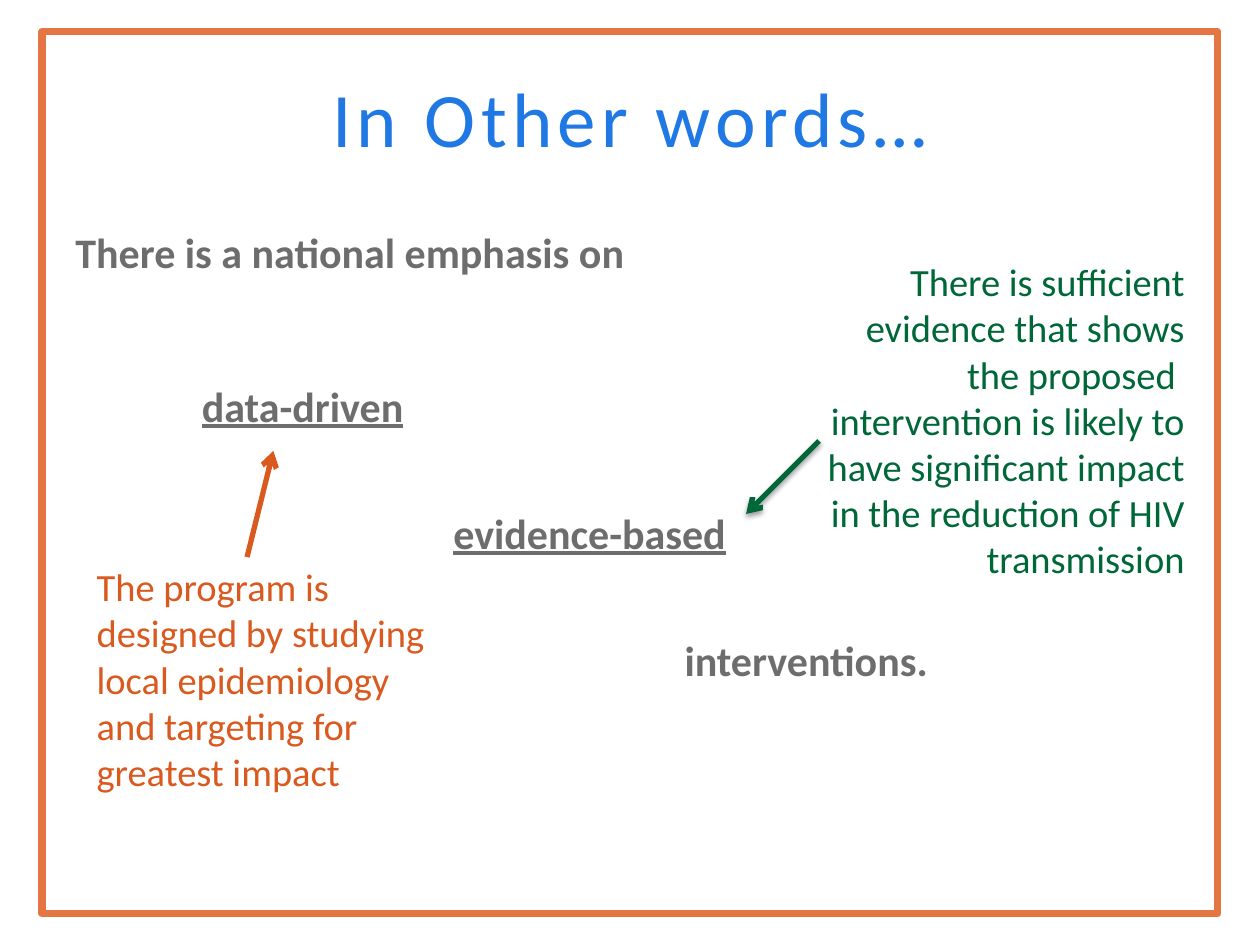
from lxml import etree
from pptx import Presentation
from pptx import util as u
from pptx.dml.color import RGBColor
from pptx.enum import shapes, text
from pptx.oxml.ns import qn

BLUE, GREY = "1F78E3", "6D6D6D"
ORANGE, GREEN, FRAME = "D9591E", "006738", "E57543"


def color(hex_code):
    return RGBColor.from_string(hex_code)


class Deck:
    font = "Calibri"

    def __init__(self, width, height):
        self.prs = Presentation()
        self.prs.slide_width, self.prs.slide_height = u.Cm(width), u.Cm(height)
        self.s = self.prs.slides.add_slide(self.prs.slide_layouts[6])

    def frame(self, x, y, w, h, line, weight):
        sp = self.s.shapes.add_shape(shapes.MSO_SHAPE.RECTANGLE, *map(u.Cm, (x, y, w, h)))
        sp.shadow.inherit = False
        sp.fill.background()
        sp.line.color.rgb = color(line)
        sp.line.width = u.Pt(weight)

    def box(self, x, y, w, h, anchor=text.MSO_ANCHOR.TOP):
        tf = self.s.shapes.add_textbox(*map(u.Cm, (x, y, w, h))).text_frame
        tf.word_wrap = True
        tf.vertical_anchor = anchor
        return tf

    def para(self, tf, words, size, fill, align=text.PP_ALIGN.LEFT, bold=False,
             underline=False, indent=0, before=0, tracking=0):
        p = tf.paragraphs[0] if not tf.text else tf.add_paragraph()
        p.alignment = align
        p.space_before = u.Pt(before)
        if indent:
            p._p.get_or_add_pPr().set("marL", str(u.Cm(indent)))
        r = p.add_run()
        r.text = words
        r.font.name, r.font.size = self.font, u.Pt(size)
        r.font.bold, r.font.underline = bold, underline
        r.font.color.rgb = color(fill)
        if tracking:
            r._r.get_or_add_rPr().set("spc", str(tracking * 100))

    def arrow(self, x1, y1, x2, y2, line, shadow=False):
        c = self.s.shapes.add_connector(
            shapes.MSO_CONNECTOR.STRAIGHT, *map(u.Cm, (x1, y1, x2, y2)))
        c.line.color.rgb = color(line)
        c.line.width = u.Pt(3)
        etree.SubElement(c.line._get_or_add_ln(), qn("a:tailEnd"), type="arrow")
        effects = etree.SubElement(c._element.spPr, qn("a:effectLst"))
        if shadow:
            outer = etree.SubElement(
                effects, qn("a:outerShdw"), blurRad=str(u.Pt(3.1)),
                dist=str(u.Pt(1.6)), dir="5400000", rotWithShape="0")
            black = etree.SubElement(outer, qn("a:srgbClr"), val="000000")
            etree.SubElement(black, qn("a:alpha"), val="38000")


def main():
    d = Deck(25.4, 19.05)

    # Border and title
    d.frame(0.85, 0.64, 23.7, 17.78, FRAME, 4.25)
    title = d.box(1.27, 0.76, 22.86, 3.18, text.MSO_ANCHOR.MIDDLE)
    d.para(title, "In Other words…", 44, BLUE, text.PP_ALIGN.CENTER, tracking=3)

    # Statement stepping down to the right: words, indent, space before, underline
    body = d.box(1.27, 4.45, 22.86, 12.57)
    for words, indent, before, underline in (
            ("There is a national emphasis on", 0, 0, False),
            ("data-driven", 2.55, 58.7, True),
            ("evidence-based", 7.62, 43.8, True),
            ("interventions.", 12.28, 43.8, False)):
        d.para(body, words, 24, GREY, bold=True, underline=underline,
               indent=indent, before=before)

    # Explanations
    d.para(d.box(1.7, 11.23, 7.42, 4.95),
           "The program is designed by studying local epidemiology "
           "and targeting for greatest impact", 22, ORANGE)
    d.para(d.box(16.08, 5.08, 8.05, 6.83),
           "There is sufficient evidence that shows the proposed  intervention is "
           "likely to have significant impact in the reduction of HIV transmission",
           22, GREEN, text.PP_ALIGN.RIGHT)

    # Arrows from explanation to term
    d.arrow(4.98, 11.23, 5.51, 9.09, ORANGE)
    d.arrow(16.51, 8.89, 15.04, 10.36, GREEN, shadow=True)

    d.prs.save("out.pptx")


if __name__ == "__main__":
    main()
